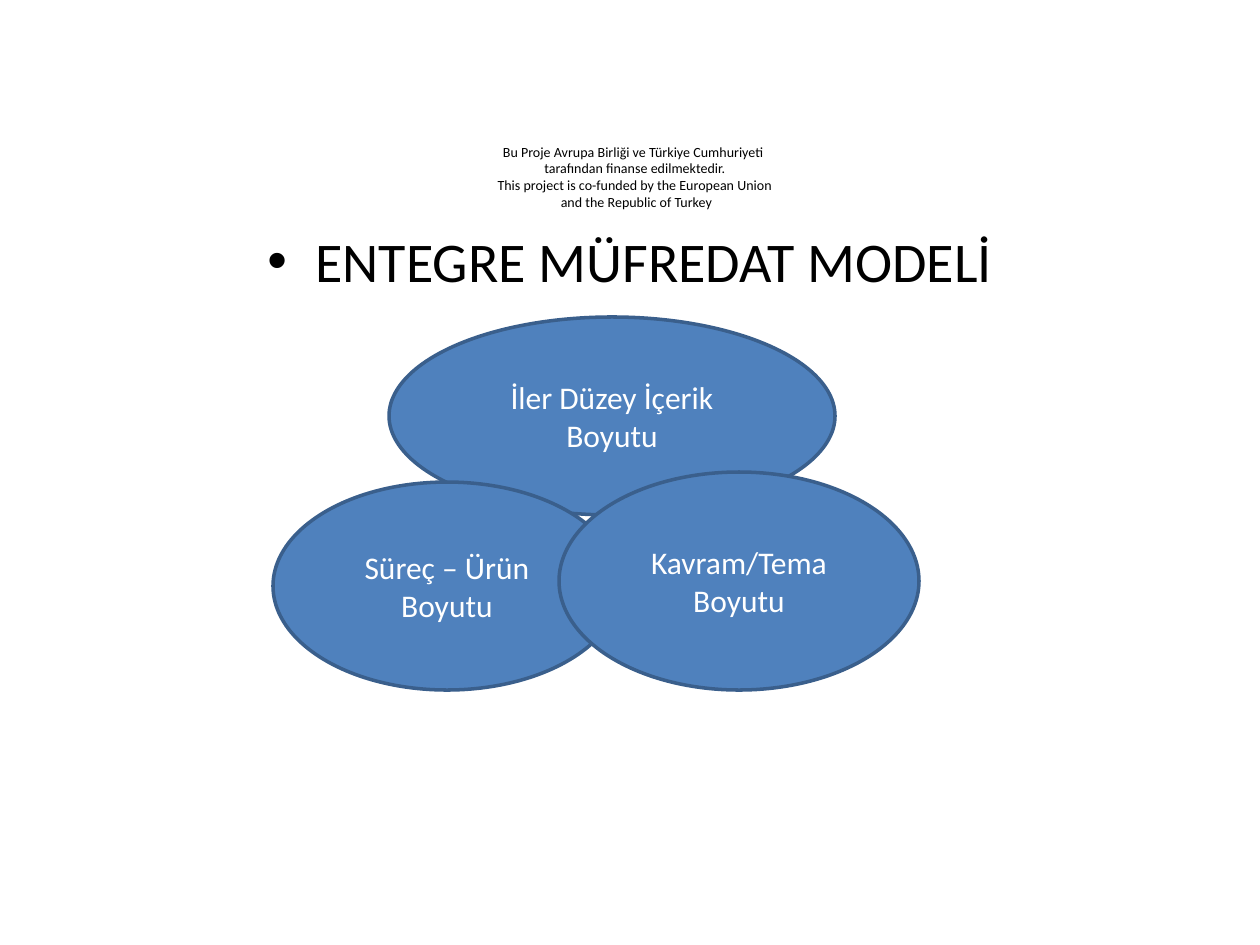
from dataclasses import dataclass

from lxml import etree
from pptx import Presentation
from pptx.dml.color import RGBColor
from pptx.enum.shapes import MSO_SHAPE
from pptx.enum.text import MSO_ANCHOR, PP_ALIGN
from pptx.oxml.ns import qn
from pptx.util import Emu, Pt

OVAL = MSO_SHAPE.OVAL
CENTER = PP_ALIGN.CENTER
MIDDLE = MSO_ANCHOR.MIDDLE
EMU_PER_PX = 914400 / 126


@dataclass(frozen=True)
class Theme:
    font: str = "Calibri"
    ink: RGBColor = RGBColor(0x00, 0x00, 0x00)
    paper: RGBColor = RGBColor(0xFF, 0xFF, 0xFF)
    fill: RGBColor = RGBColor(0x4F, 0x81, 0xBD)
    outline: RGBColor = RGBColor(0x3A, 0x5F, 0x8C)
    outline_width: int = 2
    funding_size: int = 8
    title_size: int = 32
    label_size: int = 18


THEME = Theme()
FUNDING_LINES = (
    "Bu Proje Avrupa Birliği ve Türkiye Cumhuriyeti ",
    "tarafından finanse edilmektedir.",
    "This project is co-funded by the European Union",
    " and the Republic of Turkey",
)
DIMENSIONS = (
    ("İler Düzey İçerik Boyutu", (116, 0, 446, 198)),
    ("Süreç – Ürün Boyutu", (0, 165, 348, 208)),
    ("Kavram/Tema Boyutu", (286, 155, 360, 218)),
)


def px(length):
    return Emu(round(length * EMU_PER_PX))


def style_para(para, size, color):
    para.alignment = CENTER
    para.font.name = THEME.font
    para.font.size = Pt(size)
    para.font.color.rgb = color


def add_bullet(para, indent):
    properties = para._p.get_or_add_pPr()
    properties.set("marL", str(px(indent)))
    properties.set("indent", str(-px(indent)))
    font = etree.SubElement(properties, qn("a:buFont"))
    font.set("typeface", "Arial")
    bullet = etree.SubElement(properties, qn("a:buChar"))
    bullet.set("char", "•")


def add_funding_note(page, box):
    frame = page.shapes.add_textbox(*map(px, box)).text_frame
    frame.word_wrap = False
    frame.text = "\n".join(FUNDING_LINES)
    for para in frame.paragraphs:
        style_para(para, THEME.funding_size, THEME.ink)


def add_title(page, box):
    frame = page.shapes.add_textbox(*map(px, box)).text_frame
    frame.word_wrap = True
    para = frame.paragraphs[0]
    para.text = "ENTEGRE MÜFREDAT MODELİ"
    add_bullet(para, 48)
    style_para(para, THEME.title_size, THEME.ink)


def add_model(page, origin):
    left, top = origin
    for label, (x, y, width, height) in DIMENSIONS:
        oval = page.shapes.add_shape(
            OVAL, px(left + x), px(top + y), px(width), px(height))
        oval.shadow.inherit = False
        oval.fill.solid()
        oval.fill.fore_color.rgb = THEME.fill
        oval.line.color.rgb = THEME.outline
        oval.line.width = Pt(THEME.outline_width)
        frame = oval.text_frame
        frame.word_wrap = True
        frame.vertical_anchor = MIDDLE
        frame.text = label
        style_para(frame.paragraphs[0], THEME.label_size, THEME.paper)


def main():
    deck = Presentation()
    deck.slide_width, deck.slide_height = px(1260), px(945)
    page = deck.slides.add_slide(deck.slide_layouts[6])
    add_funding_note(page, (483, 137, 304, 97))
    add_title(page, (63, 220, 1134, 624))
    add_model(page, (273, 317))
    deck.save("out.pptx")


if __name__ == "__main__":
    main()
